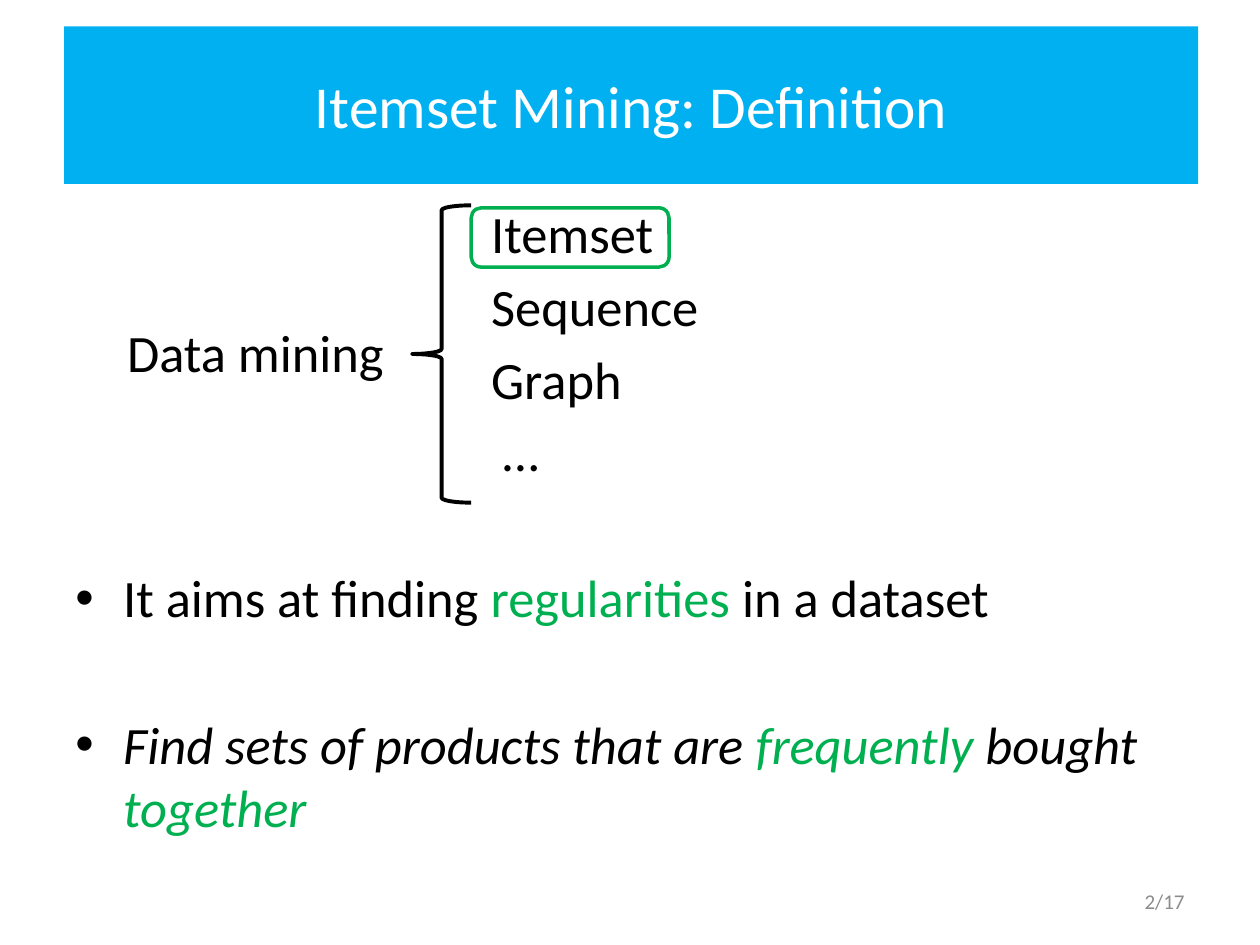
import pptx
import pptx.util
import pptx.dml.color
import pptx.enum.shapes
import pptx.enum.text
import pptx.oxml.ns
import lxml.etree

Inches, Pt = pptx.util.Inches, pptx.util.Pt
ALIGN = pptx.enum.text.PP_ALIGN
ANCHOR = pptx.enum.text.MSO_ANCHOR
SHAPE = pptx.enum.shapes.MSO_SHAPE
BLACK, GREEN, BLUE, WHITE, GREY = "000000", "00B050", "00B0F0", "FFFFFF", "8C8C8C"
BODY_SIZE = 30
LINE_GAP, BLOCK_GAP = 5.5, 47.5


def rgb(value):
    return pptx.dml.color.RGBColor.from_string(value)


def set_all(target, values):
    for name, value in values.items():
        setattr(target, name, value)


def inches(box):
    return [Inches(length) for length in box]


def add_run(paragraph, text, color=BLACK, size=BODY_SIZE, italic=None):
    run = paragraph.add_run()
    run.text = text
    set_all(run.font, {"name": "Calibri", "size": Pt(size), "italic": italic})
    run.font.color.rgb = rgb(color)


def add_text_frame(slide, box, wrap=True, anchor=ANCHOR.TOP):
    frame = slide.shapes.add_textbox(*inches(box)).text_frame
    set_all(frame, {"word_wrap": wrap, "vertical_anchor": anchor})
    return frame


def set_indent(paragraph, left, first=0, bullet=None):
    properties = paragraph._p.get_or_add_pPr()
    properties.set("marL", str(Inches(left)))
    properties.set("indent", str(Inches(first)))
    if bullet:
        qn = pptx.oxml.ns.qn
        lxml.etree.SubElement(properties, qn("a:buFont")).set("typeface", "Arial")
        lxml.etree.SubElement(properties, qn("a:buChar")).set("char", bullet)


def add_outline(slide, kind, box, color, width):
    shape = slide.shapes.add_shape(kind, *inches(box))
    shape.shadow.inherit = False
    shape.fill.background()
    shape.line.color.rgb = rgb(color)
    shape.line.width = Pt(width)


def place_title(slide, box, text):
    title = slide.shapes.title
    set_all(title, dict(zip(("left", "top", "width", "height"), inches(box))))
    title.fill.solid()
    title.fill.fore_color.rgb = rgb(BLUE)
    title.text_frame.vertical_anchor = ANCHOR.MIDDLE
    paragraph = title.text_frame.paragraphs[0]
    paragraph.alignment = ALIGN.CENTER
    add_run(paragraph, text, WHITE, 34)


def place_body(slide, box):
    left, top, width, height = box
    frame = add_text_frame(slide, box)

    # Kinds of data mining: text and left indent
    kinds = [("Itemset", 3.3), ("Sequence", 3.3), ("Graph", 3.3), ("…", 3.39)]
    for index, (kind, indent) in enumerate(kinds):
        paragraph = frame.add_paragraph() if index else frame.paragraphs[0]
        paragraph.space_before = Pt(LINE_GAP)
        set_indent(paragraph, indent)
        add_run(paragraph, kind)

    # Bulleted statements: italic flag and coloured runs
    statements = [
        (None, [("It aims at finding ", BLACK), ("regularities", GREEN),
                (" in a dataset", BLACK)]),
        (True, [("Find sets of products that are ", BLACK), ("frequently", GREEN),
                (" bought ", BLACK), ("together", GREEN)]),
    ]
    for italic, runs in statements:
        paragraph = frame.add_paragraph()
        paragraph.space_before = Pt(BLOCK_GAP)
        set_indent(paragraph, 0.38, -0.38, "•")
        for text, color in runs:
            add_run(paragraph, text, color, italic=italic)

    # Brace, its label and the highlight of the first kind
    add_outline(slide, SHAPE.LEFT_BRACE, (left + 2.77, top + 0.08, 0.47, 2.36), BLACK, 2.25)
    label = add_text_frame(slide, (left + 0.41, top + 0.94, 2.31, 0.61), wrap=False)
    add_run(label.paragraphs[0], "Data mining")
    add_outline(slide, SHAPE.ROUNDED_RECTANGLE, (left + 3.24, top + 0.1, 1.57, 0.47), GREEN, 2)


def place_page_number(slide, box, text):
    paragraph = add_text_frame(slide, box, anchor=ANCHOR.MIDDLE).paragraphs[0]
    paragraph.alignment = ALIGN.RIGHT
    add_run(paragraph, text, GREY, 12)


def main():
    presentation = pptx.Presentation()
    set_all(presentation, {"slide_width": Inches(10), "slide_height": Inches(7.5)})
    slide = presentation.slides.add_slide(presentation.slide_layouts.get_by_name("Title Only"))
    place_title(slide, (0.51, 0.21, 9, 1.25), "Itemset Mining: Definition")
    place_body(slide, (0.5, 1.55, 9.07, 5.43))
    place_page_number(slide, (7.17, 6.95, 2.33, 0.4), "2/17")
    presentation.save("out.pptx")


if __name__ == "__main__":
    main()
